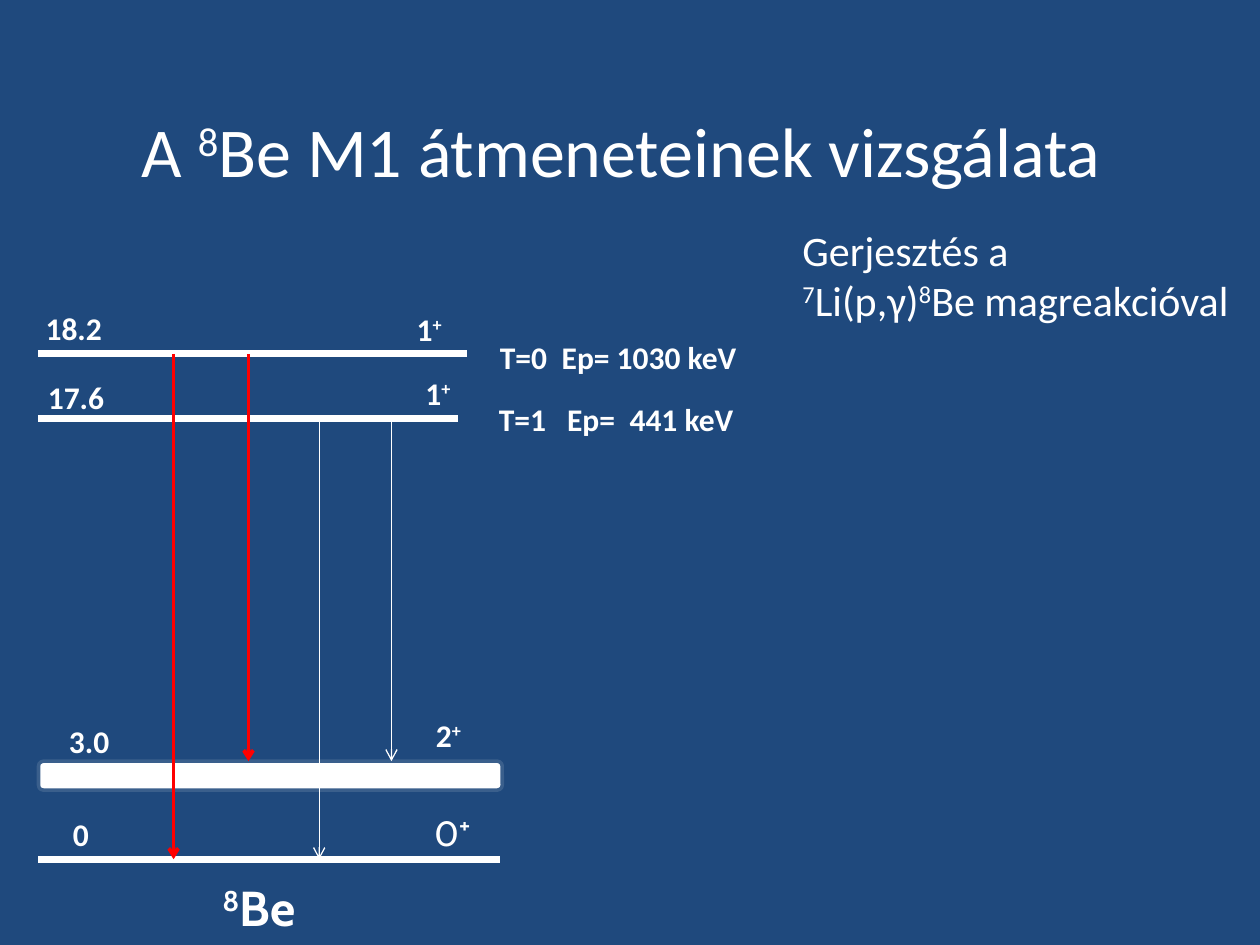
from lxml import etree
from pptx import Presentation
from pptx.dml.color import RGBColor
from pptx.enum import shapes, text
from pptx.oxml.ns import qn
from pptx.util import Pt

COLORS = {"background": "1F497D", "white": "FFFFFF", "red": "FF0000", "band_edge": "3A5F8C"}
SUPERSCRIPT = "30000"


def rgb(name):
    return RGBColor.from_string(COLORS[name])


class LevelSlide:
    """Holds the text style and the slide that is being drawn."""

    def __init__(self, prs, font="Calibri", size=18):
        self.font, self.size = font, size
        self.slide = prs.slides.add_slide(prs.slide_layouts[5])
        fill = self.slide.background.fill
        fill.solid()
        fill.fore_color.rgb = rgb("background")

    def add_run(self, p, content, size, bold=False, font=None):
        """Add one run; a leading ^ makes it superscript."""
        r = p.add_run()
        r.text = content.lstrip("^")
        r.font.name = font or self.font
        r.font.size = Pt(size)
        r.font.bold = bold
        r.font.color.rgb = rgb("white")
        if content.startswith("^"):
            r.font._element.set("baseline", SUPERSCRIPT)

    def title(self, box, runs, size=40):
        sp = self.slide.shapes.title
        sp.left, sp.top, sp.width, sp.height = (Pt(v) for v in box)
        tf = sp.text_frame
        tf.vertical_anchor = text.MSO_ANCHOR.MIDDLE
        p = tf.paragraphs[0]
        p.alignment = text.PP_ALIGN.CENTER
        for content in runs:
            self.add_run(p, content, size)

    def text_box(self, box, *lines, size=None, bold=True, font=None, wrap=False, tabs=()):
        sp = self.slide.shapes.add_textbox(*(Pt(v) for v in box))
        tf = sp.text_frame
        tf.word_wrap = wrap
        tf.auto_size = text.MSO_AUTO_SIZE.SHAPE_TO_FIT_TEXT
        for i, runs in enumerate(lines):
            p = tf.add_paragraph() if i else tf.paragraphs[0]
            if tabs:
                stops = etree.SubElement(p._p.get_or_add_pPr(), qn("a:tabLst"))
                for pos in tabs:
                    etree.SubElement(stops, qn("a:tab"), pos=str(Pt(pos)), algn="l")
            for content in runs:
                self.add_run(p, content, size or self.size, bold, font)
        return tf

    def line(self, x1, y1, x2, y2, color="white", width=4.0, arrow=False):
        cxn = self.slide.shapes.add_connector(
            shapes.MSO_CONNECTOR.STRAIGHT, Pt(x1), Pt(y1), Pt(x2), Pt(y2))
        cxn.line.color.rgb = rgb(color)
        cxn.line.width = Pt(width)
        if arrow:
            etree.SubElement(cxn.line._get_or_add_ln(), qn("a:tailEnd"), type="arrow")
        etree.SubElement(cxn._element.spPr, qn("a:effectLst"))

    def band(self, box):
        sp = self.slide.shapes.add_shape(
            shapes.MSO_SHAPE.ROUNDED_RECTANGLE, *(Pt(v) for v in box))
        sp.shadow.inherit = False
        sp.fill.solid()
        sp.fill.fore_color.rgb = rgb("white")
        sp.line.color.rgb = rgb("band_edge")
        sp.line.width = Pt(2)


def main():
    prs = Presentation()
    prs.slide_width, prs.slide_height = Pt(720), Pt(540)
    s = LevelSlide(prs)
    s.title((-5, 26, 720, 119), ["A ", "^8", "Be M1 átmeneteinek vizsgálata"])

    left, ground, band_top, lower, upper = 22, 491, 435, 239, 202.3
    for y, right in ((ground, 286), (lower, 262), (upper, 267)):
        s.line(left, y, right, y)
    s.band((left, band_top, 265, 16.5))

    under_lower = lower + 2
    for x, start, end, color, width in (
        (99.2, upper, ground, "red", 2),
        (142, upper, band_top, "red", 2),
        (182.4, under_lower, ground, "white", 0.75),
        (223.7, under_lower, band_top, "white", 0.75),
    ):
        s.line(x, start, x, end, color, width, arrow=True)

    s.text_box((120, 498, 114, 41), ["^8", "Be"], size=28, font="Cabin", wrap=True)
    ground_spin = s.text_box((241, 456, 62, 32), ["0"], size=20, bold=False,
                             font="Cabin", wrap=True)
    s.add_run(ground_spin.paragraphs[0], "^+", 24, True, "Cabin")

    for x, y, spin in ((242, 405.5, "2"), (231, 173.5, "1"), (236, 210, "1")):
        s.text_box((x, y, 36, 29), [spin, "^+"])
    for x, y, width, energy in ((34.5, 462, 26, "0"), (32.3, 409, 43, "3.0"),
                                (20.3, 212.5, 55, "17.6"), (19, 173, 55, "18.2")):
        s.text_box((x, y, width, 29), [energy])

    s.text_box((278.6, 189.5, 192, 29), ["T=0\tEp= 1030 keV"], wrap=True, tabs=(35.3,))
    s.text_box((278, 224.8, 192, 29), ["T=1\tEp=\t441 keV"], wrap=True, tabs=(39, 74.7))
    s.text_box((451.5, 124.5, 263, 65.5), ["Gerjesztés a"],
               ["^7", "Li(p,γ)", "^8", "Be magreakcióval"], size=24, bold=False)

    prs.save("out.pptx")


if __name__ == "__main__":
    main()
